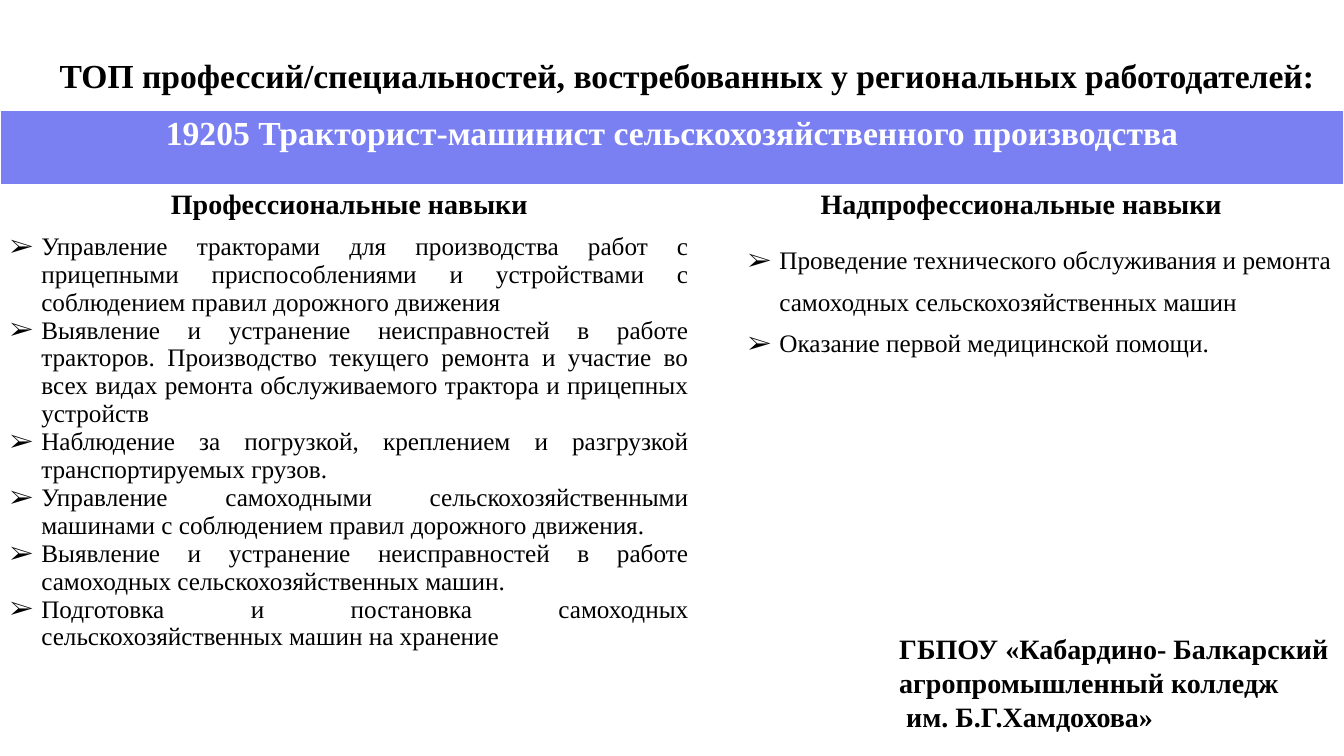
"""Build a slide on the skills of a tractor driver in demand with regional employers."""
from lxml.etree import SubElement
from pptx import Presentation
from pptx.dml.color import RGBColor
from pptx.enum.text import MSO_ANCHOR, MSO_AUTO_SIZE, PP_ALIGN
from pptx.oxml.ns import qn
from pptx.util import Inches, Pt

COLORS = {"text": "000000", "band": "7A80F2", "white": "FFFFFF"}
FONT = "Times New Roman"


def add_text(paragraph, text, size, bold=True, color="text", align=PP_ALIGN.LEFT):
    paragraph.alignment = align
    run = paragraph.add_run()
    run.text = text
    run.font.name = FONT
    run.font.size = Pt(size)
    run.font.bold = bold
    run.font.color.rgb = RGBColor.from_string(COLORS[color])


def add_skills(cell, skills, indent, align, line_spacing):
    for number, skill in enumerate(skills):
        frame = cell.text_frame
        paragraph = frame.add_paragraph() if number else frame.paragraphs[0]
        paragraph.line_spacing = line_spacing
        props = paragraph._p.get_or_add_pPr()
        props.set("marL", str(Inches(indent)))
        props.set("indent", str(Inches(-0.31)))
        SubElement(props, qn("a:buFont"), typeface="Wingdings")
        SubElement(props, qn("a:buChar"), char="➢")
        props.find(qn("a:buFont")).set("typeface", FONT)
        add_text(paragraph, skill, 18, bold=False, align=align)


prs = Presentation()
prs.slide_width = Inches(13.33)
prs.slide_height = Inches(7.5)
slide = prs.slides.add_slide(prs.slide_layouts[5])

heading = slide.shapes.title
heading.left, heading.top = Inches(0.49), Inches(0.49)
heading.width, heading.height = Inches(13.12), Inches(0.5)
heading.text_frame.word_wrap = True
heading.text_frame.auto_size = MSO_AUTO_SIZE.NONE
heading.text_frame.vertical_anchor = MSO_ANCHOR.TOP
add_text(heading.text_frame.paragraphs[0],
         "ТОП профессий/специальностей, востребованных у региональных работодателей:", 24)

skills_table = slide.shapes.add_table(
    3, 2, Inches(0), Inches(1.1), Inches(13.33), Inches(6.06)).table
skills_table.first_row = False
skills_table.horz_banding = False
for column, width in zip(skills_table.columns, (6.93, 6.4)):
    column.width = Inches(width)
for row, height in zip(skills_table.rows, (0.73, 0.43, 4.9)):
    row.height = Inches(height)
for cell in skills_table.iter_cells():
    cell.fill.background()

profession = skills_table.cell(0, 0)
profession.merge(skills_table.cell(0, 1))
profession.fill.solid()
profession.fill.fore_color.rgb = RGBColor.from_string(COLORS["band"])
add_text(profession.text_frame.paragraphs[0],
         "19205 Тракторист-машинист сельскохозяйственного производства",
         24, color="white", align=PP_ALIGN.CENTER)

professional = [
    "Управление тракторами для производства работ с прицепными приспособлениями "
    "и устройствами с соблюдением правил дорожного движения",
    "Выявление и устранение неисправностей в работе тракторов. Производство текущего "
    "ремонта и участие во всех видах ремонта обслуживаемого трактора и прицепных устройств",
    "Наблюдение за погрузкой, креплением и разгрузкой транспортируемых грузов.",
    "Управление самоходными сельскохозяйственными машинами с соблюдением правил "
    "дорожного движения.",
    "Выявление и устранение неисправностей в работе самоходных сельскохозяйственных машин.",
    "Подготовка и постановка самоходных сельскохозяйственных машин на хранение",
]
supporting = [
    "Проведение технического обслуживания и ремонта самоходных сельскохозяйственных машин",
    "Оказание первой медицинской помощи.",
]
skill_groups = [
    ("Профессиональные навыки", professional, 0.31, PP_ALIGN.JUSTIFY, 1.0),
    ("Надпрофессиональные навыки", supporting, 0.7, PP_ALIGN.LEFT, 1.5),
]
for index, (group, skills, indent, align, line_spacing) in enumerate(skill_groups):
    add_text(skills_table.cell(1, index).text_frame.paragraphs[0], group, 20,
             align=PP_ALIGN.CENTER)
    add_skills(skills_table.cell(2, index), skills, indent, align, line_spacing)

college = slide.shapes.add_textbox(
    Inches(8.82), Inches(6.22), Inches(6.81), Inches(1.11)).text_frame
college.word_wrap = True
add_text(college.paragraphs[0], "ГБПОУ «Кабардино- Балкарский агропромышленный колледж", 20)
add_text(college.add_paragraph(), " им. Б.Г.Хамдохова»", 20)

prs.save("out.pptx")
